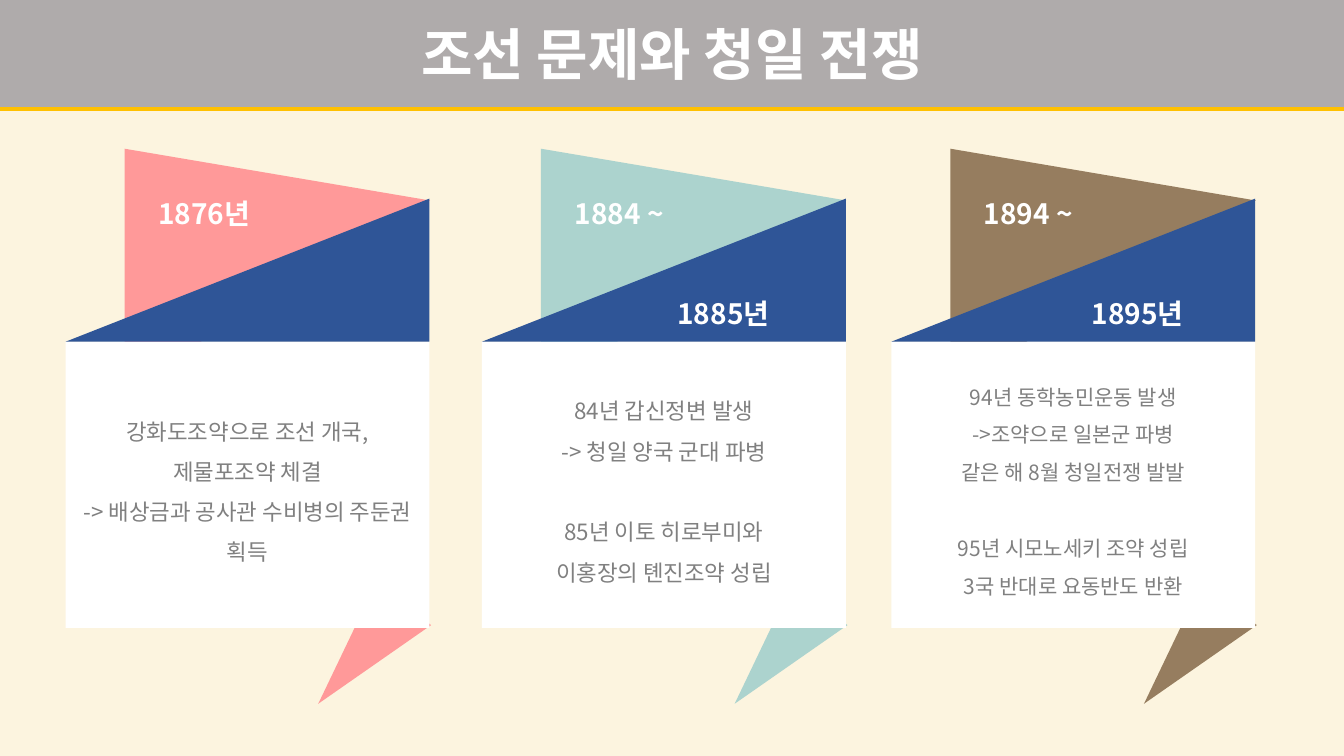
from lxml.etree import SubElement
from pptx import Presentation
from pptx.dml.color import RGBColor
from pptx.enum.shapes import MSO_SHAPE as Preset
from pptx.enum.text import MSO_ANCHOR as Anchor, PP_ALIGN as Align
from pptx.oxml.ns import qn
from pptx.util import Inches, Pt

FONT = "Noto Sans CJK KR"
WHITE = "FFFFFF"
NAVY = "2F5597"
CARD_TOP = 3.39

CARDS = [
    dict(left=0.65, color="FF9999", years=[("1876년", 0.82, 1.73)], size=16,
         blocks=[["강화도조약으로 조선 개국,", "제물포조약 체결",
                  "-> 배상금과 공사관 수비병의 주둔권 획득"]]),
    dict(left=4.78, color="ACD3CE", size=16,
         years=[("1884 ~", 0.82, 1.73), ("1885년", 1.84, 2.73)],
         blocks=[["84년 갑신정변 발생", "-> 청일 양국 군대 파병"],
                 ["85년 이토 히로부미와", "이홍장의 톈진조약 성립"]]),
    dict(left=8.84, color="967D5F", size=15,
         years=[("1894 ~", 0.82, 1.73), ("1895년", 1.89, 2.73)],
         blocks=[["94년 동학농민운동 발생", "->조약으로 일본군 파병", "같은 해 8월 청일전쟁 발발"],
                 ["95년 시모노세키 조약 성립", "3국 반대로 요동반도 반환"]]),
]


def rgb(value):
    return RGBColor.from_string(value)


def write_text(shape, blocks, size, color, bold=False, align=Align.LEFT,
               anchor=Anchor.TOP, spacing=1.5):
    frame = shape.text_frame
    frame.word_wrap = True
    frame.vertical_anchor = anchor
    paragraph = frame.paragraphs[0]
    for block_index, block in enumerate(blocks):
        for line_index, line in enumerate(block):
            if block_index or line_index:
                paragraph = frame.add_paragraph()
            if block_index and not line_index:
                paragraph.space_before = Pt(size * 1.8)
            paragraph.alignment = align
            paragraph.line_spacing = spacing
            run = paragraph.add_run()
            run.text = line
            run.font.size = Pt(size)
            run.font.bold = bold
            run.font.name = FONT
            run.font.color.rgb = rgb(color)
            SubElement(run.font._element, qn("a:ea"), typeface=FONT)


def add_preset(shapes, preset, left, top, width, height, fill, rotation=0, peak=None):
    shape = shapes.add_shape(preset, Inches(left), Inches(top), Inches(width), Inches(height))
    shape.shadow.inherit = False
    shape.fill.solid()
    shape.fill.fore_color.rgb = rgb(fill)
    shape.line.fill.background()
    shape.rotation = rotation
    if peak is not None:
        shape.adjustments[0] = peak
    return shape


def add_year(shapes, text, left, top):
    box = shapes.add_textbox(Inches(left), Inches(top), Inches(1.79), Inches(0.66))
    write_text(box, [[text]], size=20, color=WHITE, bold=True)


def add_title(shapes, text):
    banner = add_preset(shapes, Preset.RECTANGLE, 0, 0, 13.33, 1.06, "AFABAB")
    write_text(banner, [[text]], size=40, color=WHITE, bold=True,
               align=Align.CENTER, anchor=Anchor.MIDDLE, spacing=1.0)
    effects = banner.element.spPr.find(qn("a:effectLst"))
    shadow = SubElement(effects, qn("a:outerShdw"), blurRad="0", dist=str(Pt(3)),
                        dir="5400000", algn="t", rotWithShape="0")
    SubElement(shadow, qn("a:srgbClr"), val="FFC000")


def add_card(slide, left, color, years, size, blocks):
    shapes = slide.shapes.add_group_shape().shapes
    add_preset(shapes, Preset.ISOSCELES_TRIANGLE, left + 2.6, 5.84, 0.69, 1.31, color,
               rotation=218.9, peak=0.552)
    add_preset(shapes, Preset.ISOSCELES_TRIANGLE, left + 0.91, 1.15, 2.38, 3.03, color,
               rotation=90, peak=0.216)
    body = add_preset(shapes, Preset.RECTANGLE, left, CARD_TOP, 3.61, 2.84, WHITE)
    write_text(body, blocks, size=size, color="808080", align=Align.CENTER,
               anchor=Anchor.MIDDLE)
    fold = add_preset(shapes, Preset.RIGHT_TRIANGLE, left, CARD_TOP - 1.42, 3.61, 1.42, NAVY)
    fold.element.spPr.find(qn("a:xfrm")).set("flipH", "1")
    for text, offset, top in years:
        add_year(shapes, text, left + offset, top)


def main():
    presentation = Presentation()
    presentation.slide_width = Inches(13.33)
    presentation.slide_height = Inches(7.5)
    slide = presentation.slides.add_slide(presentation.slide_layouts[6])
    slide.background.fill.solid()
    slide.background.fill.fore_color.rgb = rgb("FCF4DF")
    add_title(slide.shapes, "조선 문제와 청일 전쟁")
    for card in CARDS:
        add_card(slide, **card)
    presentation.save("out.pptx")


if __name__ == "__main__":
    main()
